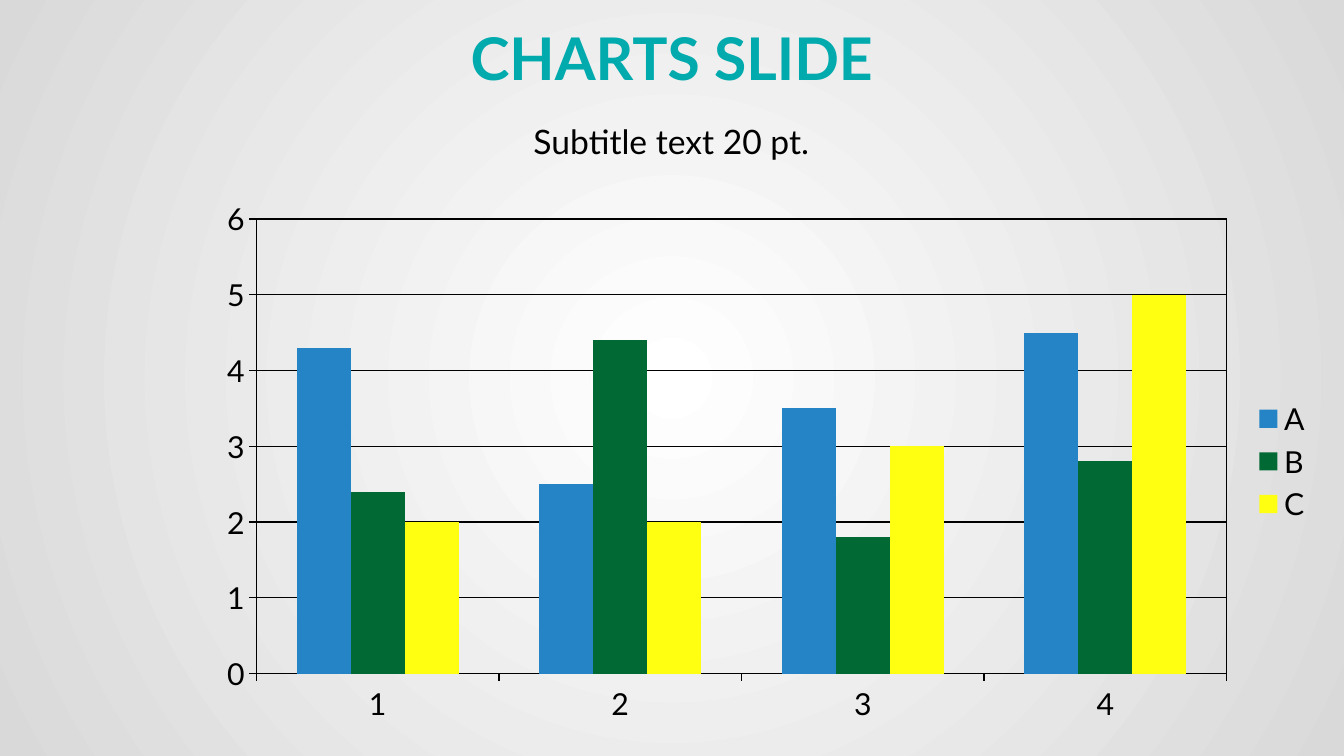
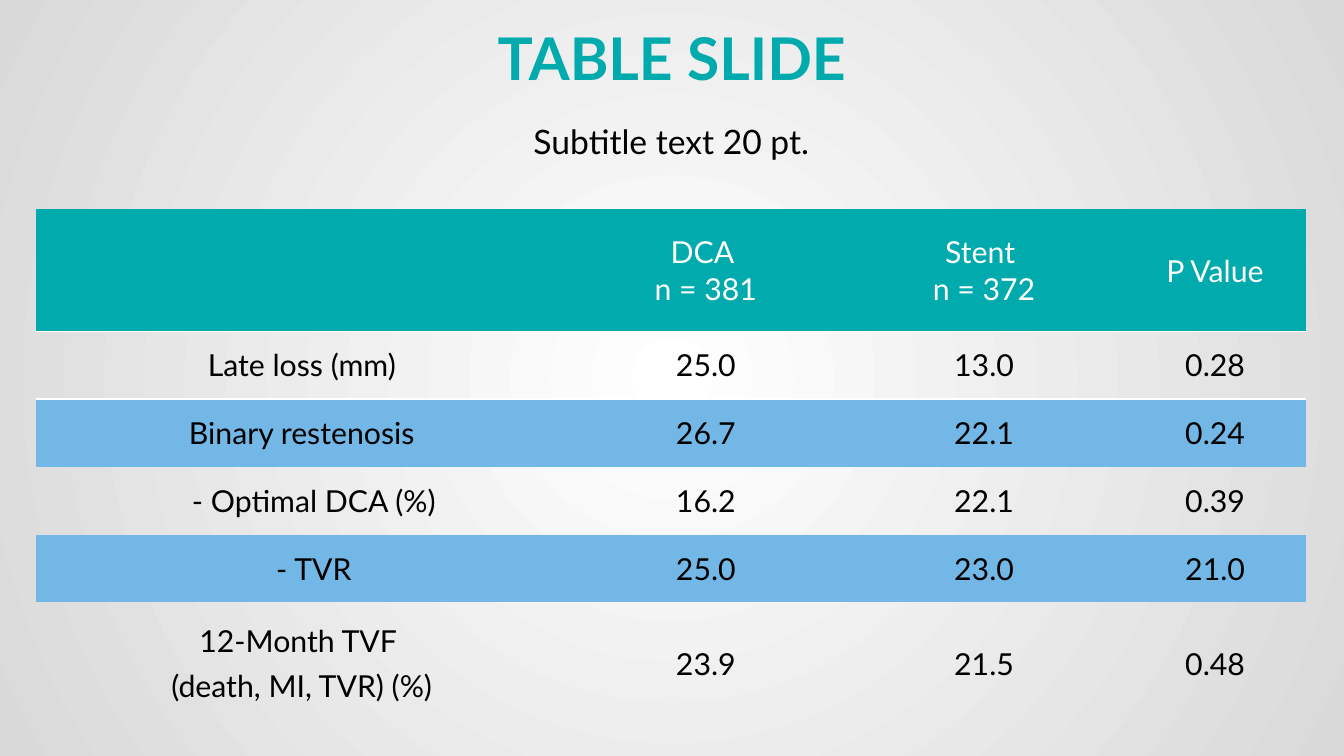
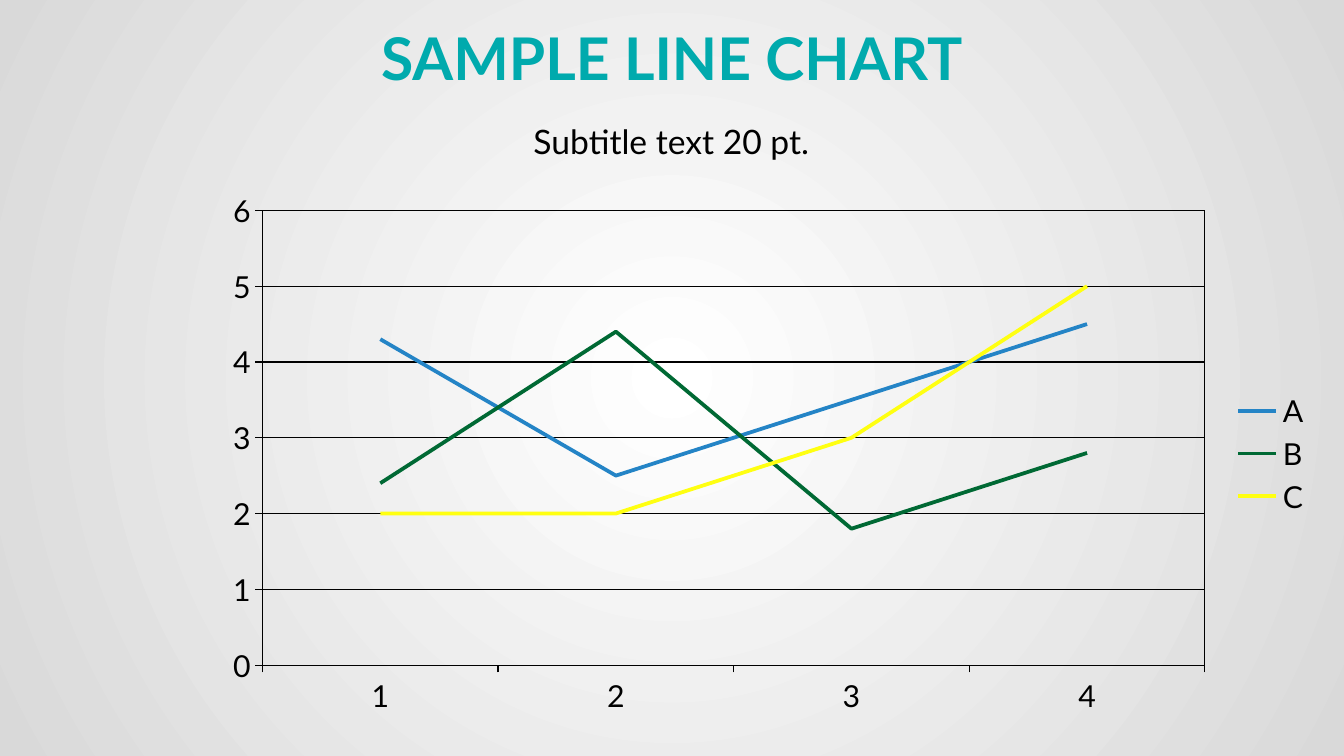
from pptx import Presentation
from pptx.chart.data import CategoryChartData as Data
from pptx.dml.color import RGBColor
from pptx.enum.chart import XL_CHART_TYPE as Kind, XL_LEGEND_POSITION as Side
from pptx.enum.chart import XL_MARKER_STYLE as Mark, XL_TICK_MARK as Tick
from pptx.enum.text import MSO_ANCHOR as Anchor, MSO_AUTO_SIZE as Fit, PP_ALIGN as Align
from pptx.oxml import parse_xml
from pptx.oxml.ns import nsdecls, qn
from pptx.util import Inches, Pt

FONT = "Lato"
TEAL, BLACK, WHITE, SKY, GRAY = "00AAAD", "000000", "FFFFFF", "73B7E6", "D9D9D9"
HUES = ["2484C6", "006934", "FFFF11"]
PLAIN = "{2D5ABB26-0587-4C30-8999-92F81FD0307C}"
SUB = "Subtitle text 20 pt."

CATS = ["1", "2", "3", "4"]
DATA = {"A": [4.3, 2.5, 3.5, 4.5], "B": [2.4, 4.4, 1.8, 2.8], "C": [2, 2, 3, 5]}

COLS = [4.39, 2.29, 2.31, 1.51]
ROWS = [1.01, 0.56, 0.56, 0.56, 0.56, 1.01]
HEAD = ["", "DCA \vn = 381", "Stent \vn = 372", "P Value"]
BODY = [
    ["Late loss (mm)", "25.0", "13.0", "0.28"],
    ["Binary restenosis", "26.7", "22.1", "0.24"],
    ["- Optimal DCA (%)", "16.2", "22.1", "0.39"],
    ["- TVR", "25.0", "23.0", "21.0"],
    ["12-Month TVF \n(death, MI, TVR) (%)", "23.9", "21.5", "0.48"],
]


def rgb(code):
    return RGBColor.from_string(code)


def style(font, size, hue, bold=False):
    font.name, font.size, font.bold = FONT, Pt(size), bold
    font.color.rgb = rgb(hue)


def stroke(line, hue, width=0.75):
    line.color.rgb = rgb(hue)
    line.width = Pt(width)


class Deck:
    def __init__(self):
        self.prs = Presentation()
        self.prs.slide_width, self.prs.slide_height = Inches(11.11), Inches(6.25)
        self.glow()

    def glow(self):
        """Give the master a round gradient that all slides inherit."""
        master = self.prs.slide_master
        fill = master.background.fill
        fill.gradient()
        for stop, hue in zip(fill.gradient_stops, (WHITE, GRAY)):
            stop.color.rgb = rgb(hue)
        grad = master.element.xpath(".//p:bg//a:gradFill")[0]
        grad.replace(grad.find(qn("a:lin")), parse_xml(
            f'<a:path {nsdecls("a")} path="circle">'
            '<a:fillToRect l="50000" t="50000" r="50000" b="50000"/></a:path>'))

    def page(self, title, sub):
        self.slide = self.prs.slides.add_slide(self.prs.slide_layouts[1])
        head, body = self.slide.placeholders
        self.hold(head, (0, 0.21, 11.11, 0.59), Anchor.MIDDLE, title, 35, TEAL, True)
        self.hold(body, (0.3, 0.99, 10.5, 0.4), Anchor.TOP, sub, 20, BLACK)

    def hold(self, shape, box, anchor, text, size, hue, bold=False):
        """Move a placeholder and fill it with one centred line."""
        shape.left, shape.top, shape.width, shape.height = map(Inches, box)
        frame = shape.text_frame
        frame.auto_size, frame.word_wrap = Fit.NONE, True
        frame.vertical_anchor = anchor
        frame.margin_left = frame.margin_right = Inches(0.05)
        frame.margin_top = frame.margin_bottom = Inches(0.05)
        para = frame.paragraphs[0]
        props = para._p.get_or_add_pPr()
        props.set("marL", "0")
        props.set("indent", "0")
        props.append(parse_xml(f'<a:buNone {nsdecls("a")}/>'))
        para.alignment, para.line_spacing, para.space_before = Align.CENTER, 0.9, Pt(0)
        run = para.add_run()
        run.text = text
        style(run.font, size, hue, bold)

    def chart(self, kind, box, plot):
        """Draw DATA; plot is the inner plot area in inches within the box."""
        data = Data()
        data.categories = CATS
        for name, vals in DATA.items():
            data.add_series(name, vals)
        chart = self.slide.shapes.add_chart(kind, *map(Inches, box), data).chart
        chart.has_title = False
        style(chart.font, 18, BLACK)
        chart.has_legend = True
        chart.legend.position = Side.RIGHT
        chart.legend.include_in_layout = False
        style(chart.legend.font, 18, BLACK)
        for axis in (chart.category_axis, chart.value_axis):
            axis.major_tick_mark, axis.minor_tick_mark = Tick.OUTSIDE, Tick.NONE
            stroke(axis.format.line, BLACK)
            style(axis.tick_labels.font, 18, BLACK)
        vals = chart.value_axis
        vals.minimum_scale, vals.maximum_scale, vals.major_unit = 0, 6, 1
        vals.has_major_gridlines = True
        stroke(vals.major_gridlines.format.line, BLACK)
        group = chart.plots[0]
        group.vary_by_categories = False
        if kind == Kind.COLUMN_CLUSTERED:
            group.gap_width, group.overlap = 150, 0
        for row, hue in zip(group.series, HUES):
            if kind == Kind.LINE:
                row.smooth = False
                row.marker.style = Mark.NONE
                stroke(row.format.line, hue, 2.25)
            else:
                row.format.fill.solid()
                row.format.fill.fore_color.rgb = rgb(hue)
        self.frame(chart, box, plot)

    def frame(self, chart, box, plot):
        """Place the plot area and outline it."""
        area = chart._chartSpace.xpath(".//c:plotArea")[0]
        for old in area.findall(qn("c:layout")):
            area.remove(old)
        parts = zip("xywh", plot, box[2:] * 2)
        spots = "".join(f'<c:{key} val="{size / full:.4f}"/>' for key, size, full in parts)
        area.insert(0, parse_xml(
            f'<c:layout {nsdecls("c")}><c:manualLayout><c:layoutTarget val="inner"/>'
            f'<c:xMode val="edge"/><c:yMode val="edge"/>{spots}</c:manualLayout></c:layout>'))
        area.append(parse_xml(
            f'<c:spPr {nsdecls("c", "a")}><a:noFill/><a:ln w="{Pt(0.75)}"><a:solidFill>'
            f'<a:srgbClr val="{BLACK}"/></a:solidFill></a:ln></c:spPr>'))

    def table(self, left, top):
        rows = [HEAD] + BODY
        size = Inches(sum(COLS)), Inches(sum(ROWS))
        table = self.slide.shapes.add_table(
            len(ROWS), len(COLS), Inches(left), Inches(top), *size).table
        table.first_row = table.horz_banding = False
        table._tbl.tblPr.find(qn("a:tableStyleId")).text = PLAIN
        for col, width in zip(table.columns, COLS):
            col.width = Inches(width)
        for num, (row, high) in enumerate(zip(table.rows, ROWS)):
            row.height = Inches(high)
            fill = TEAL if num == 0 else SKY if num % 2 == 0 else None
            for cell, text in zip(row.cells, rows[num]):
                self.cell(cell, text, fill, WHITE if num == 0 else BLACK)
                if num < 2:
                    self.edge(cell, "lnT" if num else "lnB")

    def cell(self, cell, text, fill, hue):
        cell.vertical_anchor = Anchor.MIDDLE
        cell.margin_left = Inches(0.31 if text.startswith("-") else 0.11)
        cell.margin_right = Inches(0.11)
        cell.margin_top = cell.margin_bottom = Inches(0.06)
        if fill:
            cell.fill.solid()
            cell.fill.fore_color.rgb = rgb(fill)
        else:
            cell.fill.background()
        if not text:
            return
        frame = cell.text_frame
        for num, part in enumerate(text.split("\n")):
            para = frame.add_paragraph() if num else frame.paragraphs[0]
            para.alignment = Align.CENTER
            para.space_before = Pt(5.4 if num else 0)
            for spot, line in enumerate(part.split("\v")):
                if spot:
                    para.add_line_break()
                run = para.add_run()
                run.text = line
                style(run.font, 18, hue)

    def edge(self, cell, side):
        cell._tc.get_or_add_tcPr().insert(0, parse_xml(
            f'<a:{side} {nsdecls("a")} w="{Pt(1)}"><a:solidFill>'
            f'<a:srgbClr val="{WHITE}"/></a:solidFill></a:{side}>'))


def main():
    deck = Deck()
    deck.page("CHARTS SLIDE", SUB)
    deck.chart(Kind.COLUMN_CLUSTERED, (1.7, 1.57, 9.25, 4.49), (0.42, 0.24, 8.02, 3.76))
    deck.page("TABLE SLIDE", SUB)
    deck.table(0.3, 1.73)
    deck.page("SAMPLE LINE CHART", SUB)
    deck.chart(Kind.LINE, (1.75, 1.5, 9.19, 4.5), (0.42, 0.24, 7.79, 3.76))
    deck.prs.save("out.pptx")


if __name__ == "__main__":
    main()
